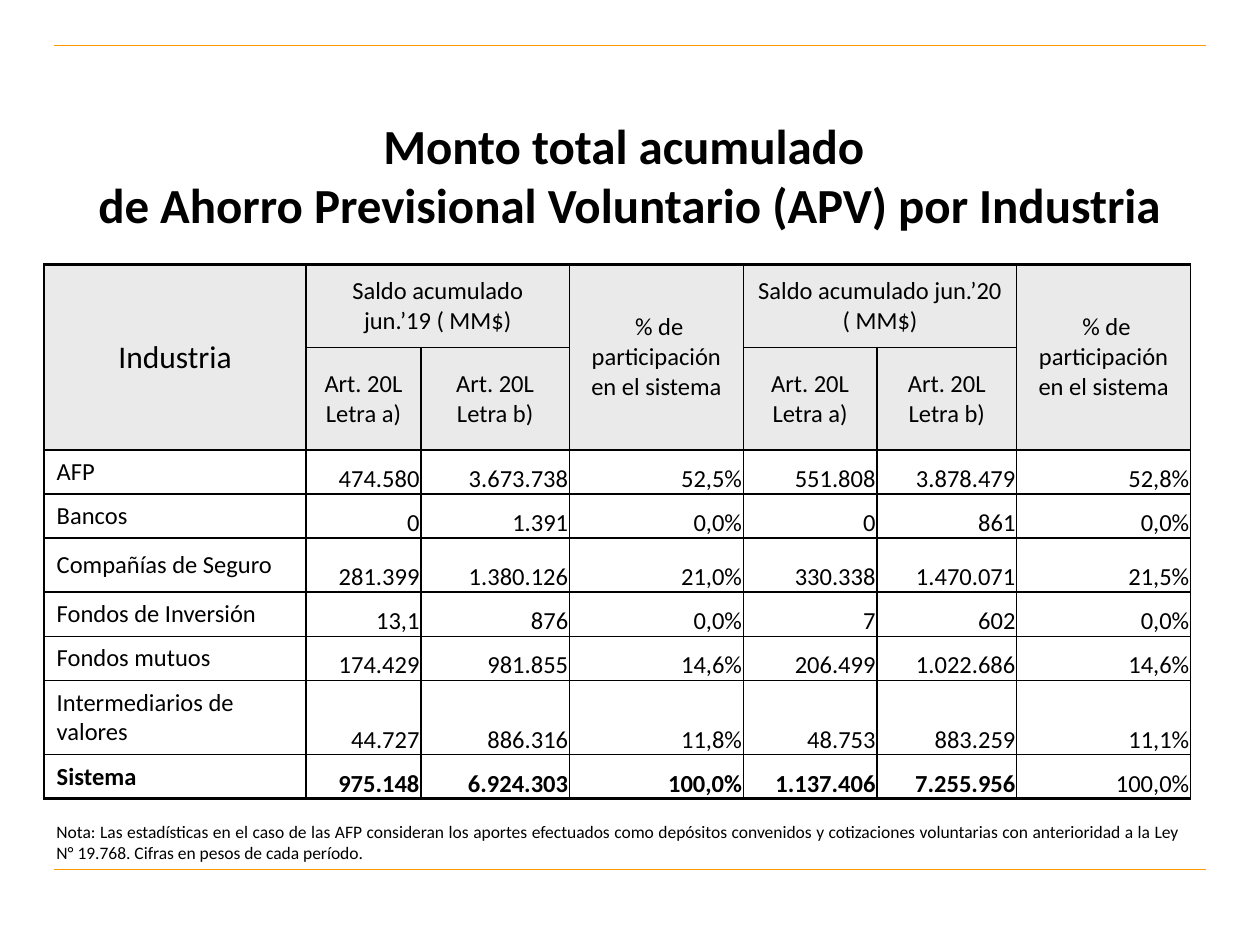
import pptx
import pptx.util
import pptx.dml.color
import pptx.enum.text
import pptx.oxml
import pptx.oxml.ns
from lxml import etree

Inches, Pt = pptx.util.Inches, pptx.util.Pt
Color = pptx.dml.color.RGBColor.from_string
Align = pptx.enum.text.PP_ALIGN
Anchor = pptx.enum.text.MSO_ANCHOR
Fit = pptx.enum.text.MSO_AUTO_SIZE

theme = dict(font="Calibri", ink="000000", rule="FF9900", head="EAEAEA",
             paper="FFFFFF", title=28, lead=18, body=14, note=10)


def style(frame, size, align, bold=False):
    for para in frame.paragraphs:
        para.alignment = align
        font = para.font
        font.name, font.size, font.bold = theme["font"], Pt(size), bold
        font.color.rgb = Color(theme["ink"])


def border(cell, top, bottom):
    props = cell._tc.get_or_add_tcPr()
    sides = dict(lnL=1, lnR=1, lnT=top, lnB=bottom)
    for spot, (side, width) in enumerate(sides.items()):
        props.insert(spot, pptx.oxml.parse_xml(
            f'<a:{side} {pptx.oxml.ns.nsdecls("a")} w="{Pt(width)}">'
            f'<a:solidFill><a:srgbClr val="{theme["ink"]}"/></a:solidFill>'
            f'</a:{side}>'))


deck = pptx.Presentation()
deck.slide_width, deck.slide_height = Inches(10), Inches(7.5)
slide = deck.slides.add_slide(deck.slide_layouts[5])
left, width = Inches(0.35), Inches(9.1)

# Rules at top and bottom
for y in (0.36, 6.9):
    rule = slide.shapes.add_connector(1, Inches(0.43), Inches(y),
                                      Inches(9.57), Inches(y))
    rule.line.color.rgb = Color(theme["rule"])
    rule.line.width = Pt(0.75)
    etree.SubElement(rule._element.spPr, pptx.oxml.ns.qn("a:effectLst"))

# Title
title = slide.shapes.title
title.left, title.top = left, Inches(0.76)
title.width, title.height = Inches(9.29), Inches(1.25)
frame = title.text_frame
frame.text = ("Monto total acumulado \v"
              "de Ahorro Previsional Voluntario (APV) por Industria")
frame.auto_size = Fit.NONE
frame.vertical_anchor = Anchor.MIDDLE
style(frame, theme["title"], Align.CENTER, True)

# Table content
share = " % de\nparticipación en el sistema"
art_a, art_b = "Art. 20L\nLetra a)", "Art. 20L\nLetra b)"
rows = [
    ["Industria", "Saldo acumulado jun.’19 ( MM$)", "", share,
     "Saldo acumulado jun.’20 ( MM$)", "", share],
    ["", art_a, art_b, "", art_a, art_b, ""],
    ["AFP", "474.580", "3.673.738", "52,5%", "551.808", "3.878.479", "52,8%"],
    ["Bancos", "0", "1.391", "0,0%", "0", "861", "0,0%"],
    ["Compañías de Seguro", "281.399", "1.380.126", "21,0%",
     "330.338", "1.470.071", "21,5%"],
    ["Fondos de Inversión", "13,1", "876", "0,0%", "7", "602", "0,0%"],
    ["Fondos mutuos", "174.429", "981.855", "14,6%",
     "206.499", "1.022.686", "14,6%"],
    ["Intermediarios de valores", "44.727", "886.316", "11,8%",
     "48.753", "883.259", "11,1%"],
    ["Sistema", "975.148", "6.924.303", "100,0%",
     "1.137.406", "7.255.956", "100,0%"],
]
widths = [2.08, 0.91, 1.18, 1.38, 1.06, 1.11, 1.38]
heights = [0.66, 0.59, 0.35, 0.35, 0.43, 0.35, 0.35, 0.59, 0.35]
last = len(rows) - 1

# Table grid
table = slide.shapes.add_table(len(rows), len(widths), left, Inches(2.1),
                               width, Inches(sum(heights))).table
table.first_row = table.horz_banding = False
for col, size in zip(table.columns, widths):
    col.width = Inches(size)
for row, size in zip(table.rows, heights):
    row.height = Inches(size)

# Table cells
for r, row in enumerate(rows):
    for c, text in enumerate(row):
        cell = table.cell(r, c)
        head, number = r < 2, r > 1 and c > 0
        cell.text = text
        cell.vertical_anchor = Anchor.BOTTOM if number else Anchor.MIDDLE
        cell.margin_left = cell.margin_right = Inches(0.01 if number else 0.1)
        cell.margin_top = Inches(0.01 if number else 0.05)
        cell.margin_bottom = Inches(0 if number else 0.05)
        if number and c in (3, 6):
            cell.fill.background()
        else:
            cell.fill.solid()
            cell.fill.fore_color.rgb = Color(theme["head" if head else "paper"])
        align = Align.CENTER if head else Align.RIGHT if number else Align.LEFT
        size = theme["lead" if r == c == 0 else "body"]
        style(cell.text_frame, size, align, r == last and c < 6)
        border(cell, 2 if r == 0 else 1, 2 if r == last else 1)

# Merged headings
for c in (0, 3, 6):
    table.cell(0, c).merge(table.cell(1, c))
for c in (1, 4):
    table.cell(0, c).merge(table.cell(0, c + 1))

# Note
note = slide.shapes.add_textbox(left, Inches(6.47), width, Inches(0.44))
frame = note.text_frame
frame.word_wrap = True
frame.auto_size = Fit.SHAPE_TO_FIT_TEXT
frame.text = ("Nota: Las estadísticas en el caso de las AFP consideran los "
              "aportes efectuados como depósitos convenidos y cotizaciones "
              "voluntarias con anterioridad a la Ley N° 19.768. "
              "Cifras en pesos de cada período.")
style(frame, theme["note"], Align.JUSTIFY)

deck.save("out.pptx")
